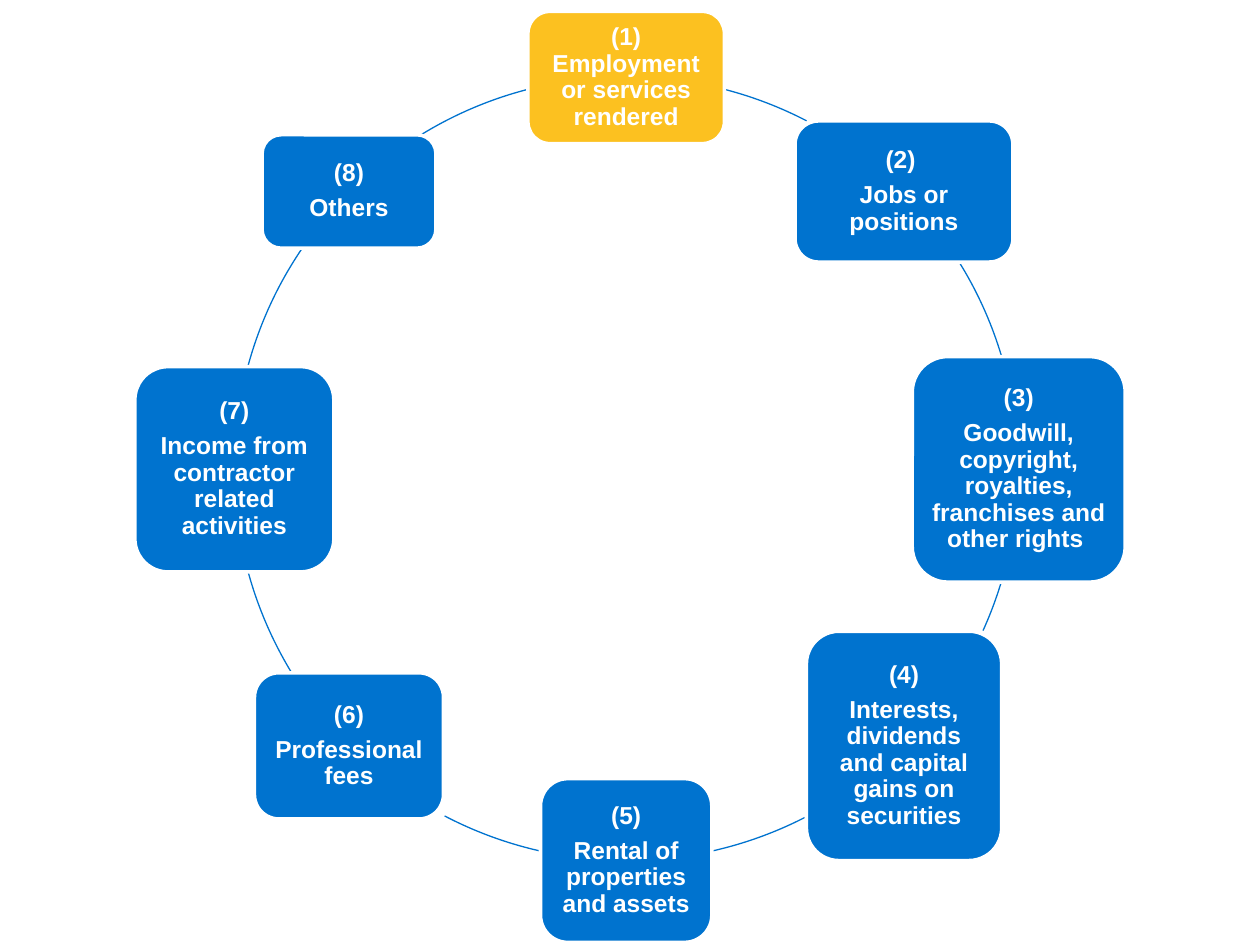
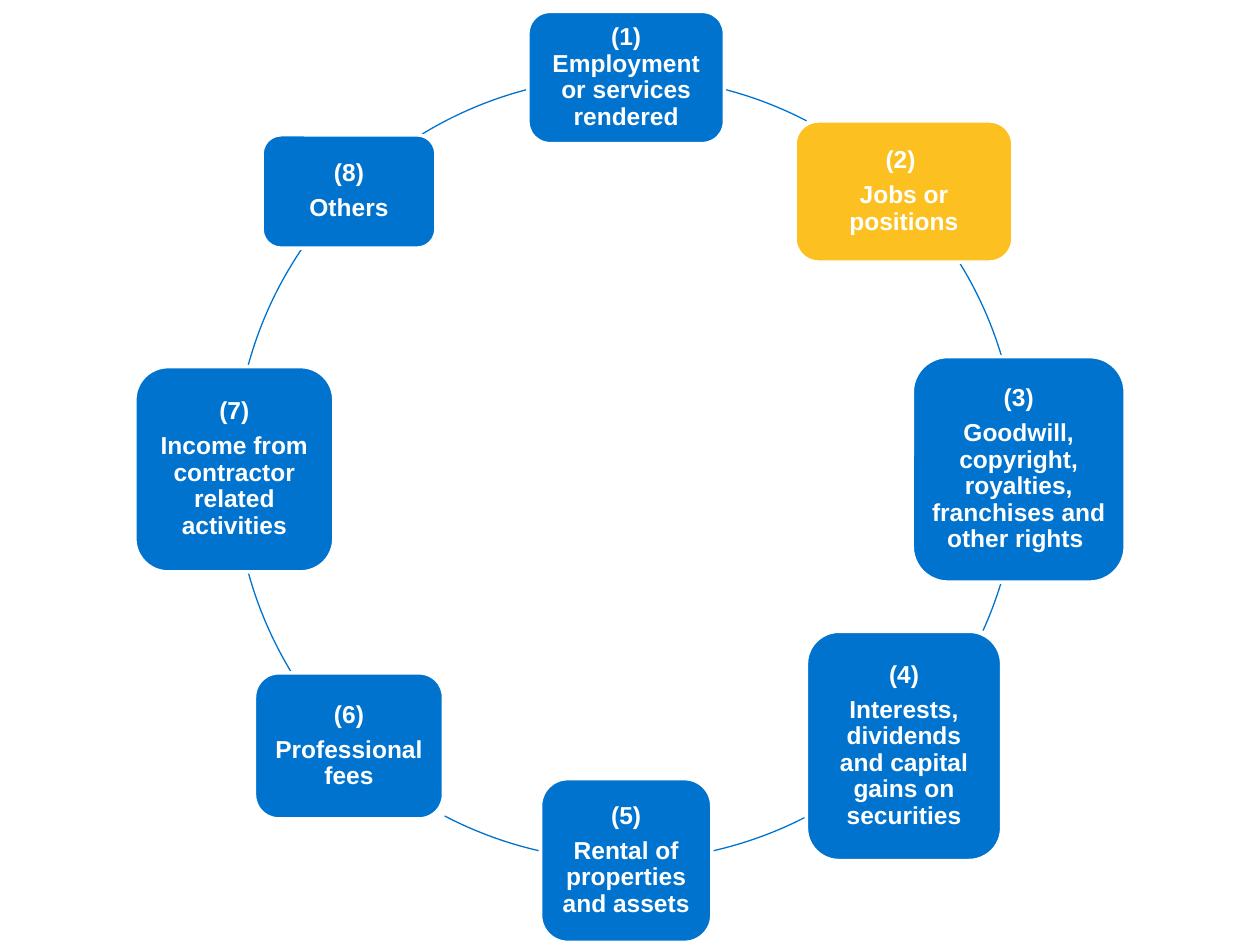
from pptx import Presentation
from pptx.dml.color import RGBColor
from pptx.enum.shapes import MSO_SHAPE
from pptx.enum.text import MSO_ANCHOR, PP_ALIGN
from pptx.util import Inches, Pt

ROUNDED, ARC = MSO_SHAPE.ROUNDED_RECTANGLE, MSO_SHAPE.ARC
MIDDLE, CENTER = MSO_ANCHOR.MIDDLE, PP_ALIGN.CENTER

BLUE = RGBColor(0x00, 0x73, 0xCF)
YELLOW = RGBColor(0xFC, 0xC1, 0x20)
WHITE = RGBColor(0xFF, 0xFF, 0xFF)
FONT = "Arial"

RING = (1.86, 0.61, 6.22, 6.22)

# Box of each income category and its paragraphs, clockwise from the top
CATEGORIES = [
    ((4.19, 0.09, 1.56, 1.05), ["(1) Employment or services rendered"]),
    ((6.31, 0.96, 1.73, 1.12), ["(2) ", "Jobs or positions"]),
    ((7.24, 2.83, 1.69, 1.79),
     ["(3)", "Goodwill, copyright, royalties, franchises and other rights "]),
    ((6.4, 5.01, 1.55, 1.82),
     ["(4)", "Interests, dividends and capital gains on securities"]),
    ((4.29, 6.18, 1.36, 1.3), ["(5)", "Rental of properties and assets"]),
    ((2.02, 5.34, 1.5, 1.16), ["(6)", "Professional fees"]),
    ((1.07, 2.91, 1.58, 1.63),
     ["(7)", "Income from contractor related activities"]),
    ((2.08, 1.07, 1.38, 0.9), ["(8)", "Others"]),
]

# Visible pieces of the ring in degrees, clockwise from three o'clock
RING_GAPS = [
    (284.7, 297.4), (328.4, 343.2), (16.8, 24.4), (62.9, 77.2),
    (102.8, 117.6), (148.8, 164.7), (195.3, 214.1), (238.6, 255.3),
]


def add_preset(page, preset, box, line_color, line_width):
    shape = page.shapes.add_shape(preset, *(Inches(value) for value in box))
    shape.shadow.inherit = False
    shape.line.color.rgb = line_color
    shape.line.width = Pt(line_width)
    return shape


def write_text(frame, paragraphs, size=14, color=WHITE, bold=True,
               inset=0.06, line_spacing=0.9, gap=4.9):
    frame.word_wrap = True
    frame.vertical_anchor = MIDDLE
    frame.margin_left = frame.margin_right = Inches(inset)
    frame.margin_top = frame.margin_bottom = Inches(inset)
    for index, text in enumerate(paragraphs):
        para = frame.add_paragraph() if index else frame.paragraphs[0]
        para.alignment = CENTER
        para.line_spacing = line_spacing
        para.space_before = Pt(gap if index else 0)
        span = para.add_run()
        span.text = text
        span.font.name = FONT
        span.font.size = Pt(size)
        span.font.bold = bold
        span.font.color.rgb = color


def add_category(page, box, paragraphs, fill):
    node = add_preset(page, ROUNDED, box, WHITE, 2)
    node.adjustments[0] = 0.167
    node.fill.solid()
    node.fill.fore_color.rgb = fill
    write_text(node.text_frame, paragraphs)


def add_ring_piece(page, box, angles):
    arc = add_preset(page, ARC, box, BLUE, 0.75)
    arc.fill.background()
    for index, degrees in enumerate(angles):
        # Angles are stored in 1/60000 degree, adjustments in 1/100000
        arc.adjustments[index] = degrees * 0.6


def add_cycle_slide(deck, highlighted):
    """Draw the cycle of categories with one of them, by number, in yellow."""
    page = deck.slides.add_slide(deck.slide_layouts[6])
    for angles in RING_GAPS:
        add_ring_piece(page, RING, angles)
    for number, (box, paragraphs) in enumerate(CATEGORIES, start=1):
        fill = YELLOW if number == highlighted else BLUE
        add_category(page, box, paragraphs, fill)


def main():
    deck = Presentation()
    deck.slide_width, deck.slide_height = Inches(10), Inches(7.5)
    for highlighted in (1, 2):
        add_cycle_slide(deck, highlighted)
    deck.save("out.pptx")


if __name__ == "__main__":
    main()
